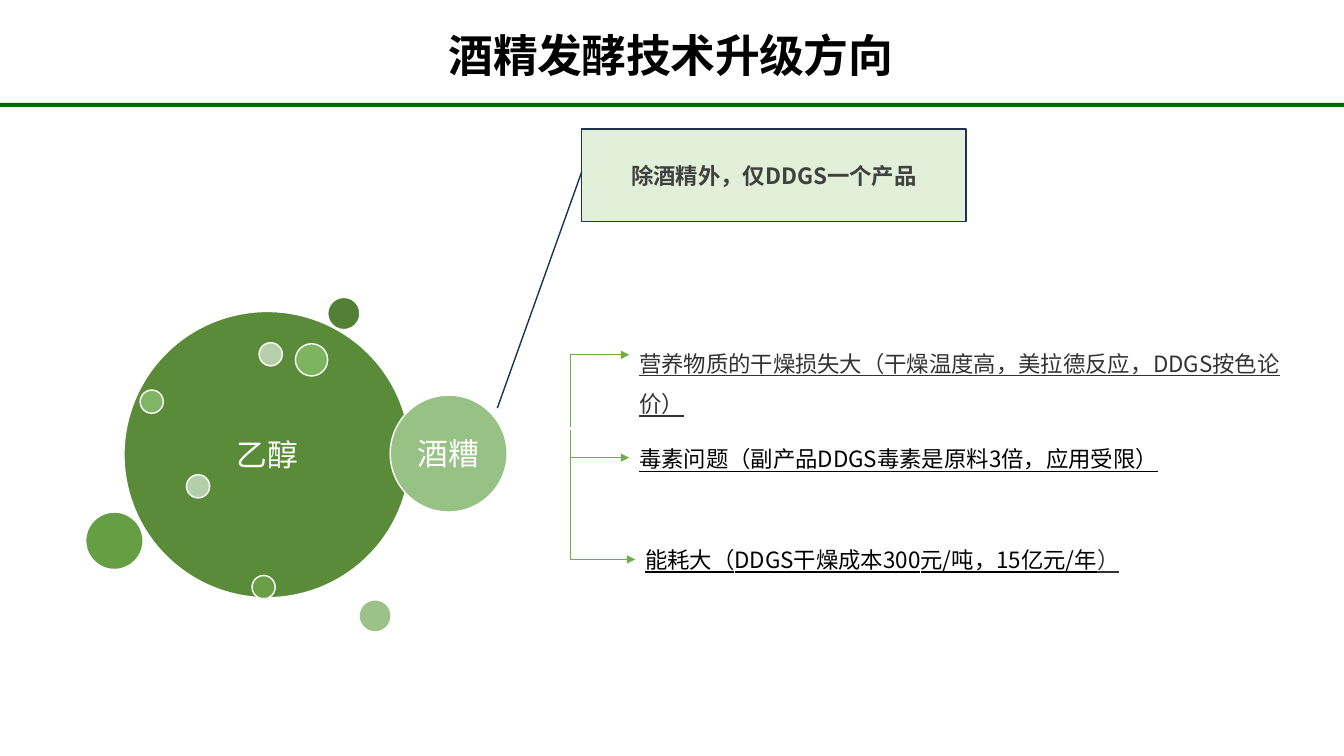
"""Build the slide on upgrade directions for alcohol fermentation."""
from lxml.etree import SubElement
from pptx import Presentation
from pptx.dml.color import RGBColor
from pptx.enum.shapes import MSO_CONNECTOR, MSO_SHAPE
from pptx.enum.text import MSO_ANCHOR, MSO_AUTO_SIZE, PP_ALIGN
from pptx.oxml.ns import qn
from pptx.util import Inches, Pt

TITLE = "酒精发酵技术升级方向"
CALLOUT = "除酒精外，仅DDGS一个产品"
CIRCLES = [
    (1.23, 3.09, 2.84, "5A8B39", "乙醇"),
    (3.25, 2.95, 0.32, "538035", ""),
    (2.5, 5.71, 0.23, "699F47", ""),
    (1.39, 3.87, 0.23, "81B464", ""),
    (3.56, 5.95, 0.32, "9CC189", ""),
    (2.57, 3.4, 0.23, "B7D0AC", ""),
    (1.85, 4.71, 0.23, "B4CFA8", ""),
    (3.87, 3.92, 1.16, "98C185", "酒糟"),
    (2.93, 3.41, 0.32, "7DB460", ""),
    (0.85, 5.08, 0.57, "669E44", ""),
]
PROBLEMS = [
    (6.24, 3.29, 6.92, 0.46, 1.5,
     [("营养物质的干燥损失大（干燥温度高，美拉德反应，DDGS按色论价）", "grey")]),
    (6.24, 4.37, 6.02, 0.37, 1.0,
     [("毒素问题（副产品DDGS毒素是原料3倍，应用受限）", "black")]),
    (6.3, 5.37, 6.48, 0.37, 1.0,
     [("能耗大（DDGS干燥成本300元/吨，15亿元/年", "black"), ("）", "grey")]),
]
TRUNK = 5.66
ELBOWS = [(4.24, 6.24, 3.52), (4.27, 6.3, 5.55)]
BRANCH = (4.54, 6.24)

THEME = {
    "font": "Noto Sans CJK SC", "label_font": "Arial",
    "title": Pt(32), "label": Pt(22), "body": Pt(16), "line": Pt(1),
    "black": "000000", "grey": "333333", "callout_text": "404040",
    "white": "FFFFFF", "rule": "026701", "arrow": "70AD47",
    "callout": "E2F0D9", "callout_line": "1E3256",
}


def apply_format(target, values):
    for name, value in values.items():
        setattr(target, name, value)


def write_run(paragraph, text, color, font_name=THEME["font"], **values):
    run = paragraph.add_run()
    run.text = text
    apply_format(run.font, {"name": font_name, **values})
    run.font.color.rgb = RGBColor.from_string(color)
    SubElement(run.font._element, qn("a:ea"), typeface=THEME["font"])
    return run


def set_frame(shape, anchor, margin=None, **values):
    frame = shape.text_frame
    apply_format(frame, {"word_wrap": True, "vertical_anchor": anchor, **values})
    if margin is not None:
        sides = ("left", "top", "right", "bottom")
        apply_format(frame, {f"margin_{side}": margin for side in sides})
    return frame.paragraphs[0]


def add_filled(slide, kind, box, fill, line=None):
    shape = slide.shapes.add_shape(kind, *map(Inches, box))
    shape.shadow.inherit = False
    shape.fill.solid()
    shape.fill.fore_color.rgb = RGBColor.from_string(fill)
    if line:
        shape.line.color.rgb = RGBColor.from_string(line)
        shape.line.width = THEME["line"]
    else:
        shape.line.fill.background()
    return shape


def add_arrow(slide, kind, *ends):
    connector = slide.shapes.add_connector(kind, *map(Inches, ends))
    connector.line.color.rgb = RGBColor.from_string(THEME["arrow"])
    connector.line.width = THEME["line"]
    SubElement(connector.line._get_or_add_ln(), qn("a:tailEnd"), type="triangle")
    SubElement(connector._element.spPr, qn("a:effectLst"))
    return connector


def add_elbow(slide, start_y, end_x, end_y):
    """Draw a vertical-then-horizontal arrow as a turned two-segment elbow."""
    center_x, center_y = (TRUNK + end_x) / 2, (start_y + end_y) / 2
    half_width, half_height = abs(end_y - start_y) / 2, (end_x - TRUNK) / 2
    rising = end_y < start_y
    side = half_height if rising else -half_height
    connector = add_arrow(slide, MSO_CONNECTOR.ELBOW,
                          center_x + half_width, center_y + side,
                          center_x - half_width, center_y - side)
    properties = connector._element.spPr
    properties.find(qn("a:xfrm")).set("rot", str((90 if rising else 270) * 60000))
    properties.find(qn("a:prstGeom")).set("prst", "bentConnector2")


def main():
    presentation = Presentation()
    apply_format(presentation, {"slide_width": Inches(13.33), "slide_height": Inches(7.5)})
    slide = presentation.slides.add_slide(presentation.slide_layouts[5])

    add_filled(slide, MSO_SHAPE.RECTANGLE, (0, 1.02, 13.33, 0.04), THEME["rule"])
    title = slide.shapes.title
    apply_format(title, {"left": Inches(0.31), "top": Inches(0.32),
                         "width": Inches(12.69), "height": Inches(0.51)})
    paragraph = set_frame(title, MSO_ANCHOR.MIDDLE, 0, auto_size=MSO_AUTO_SIZE.NONE)
    apply_format(paragraph, {"alignment": PP_ALIGN.CENTER, "line_spacing": 0.91})
    run = write_run(paragraph, TITLE, THEME["black"], size=THEME["title"], bold=True)
    run.font._element.set("spc", "-30")

    for left, top, diameter, fill, label in CIRCLES:
        circle = add_filled(slide, MSO_SHAPE.OVAL, (left, top, diameter, diameter),
                            fill, THEME["white"])
        if label:
            paragraph = set_frame(circle, MSO_ANCHOR.MIDDLE, 0)
            paragraph.alignment = PP_ALIGN.CENTER
            write_run(paragraph, label, THEME["white"], THEME["label_font"],
                      size=THEME["label"])

    for left, top, width, height, spacing, runs in PROBLEMS:
        box = slide.shapes.add_textbox(*map(Inches, (left, top, width, height)))
        paragraph = set_frame(box, MSO_ANCHOR.TOP,
                              auto_size=MSO_AUTO_SIZE.SHAPE_TO_FIT_TEXT)
        paragraph.line_spacing = spacing
        for text, color in runs:
            write_run(paragraph, text, THEME[color], size=THEME["body"], underline=True)

    callout = add_filled(slide, MSO_SHAPE.LINE_CALLOUT_1, (5.77, 1.28, 3.81, 0.92),
                         THEME["callout"], THEME["callout_line"])
    for index, value in enumerate((0.46, 0, 3.01, -0.22)):
        callout.adjustments[index] = value
    paragraph = set_frame(callout, MSO_ANCHOR.MIDDLE)
    paragraph.alignment = PP_ALIGN.CENTER
    write_run(paragraph, CALLOUT, THEME["callout_text"], size=THEME["body"], bold=True)

    for elbow in ELBOWS:
        add_elbow(slide, *elbow)
    branch_y, branch_end = BRANCH
    add_arrow(slide, MSO_CONNECTOR.STRAIGHT, TRUNK, branch_y, branch_end, branch_y)
    presentation.save("out.pptx")


if __name__ == "__main__":
    main()
